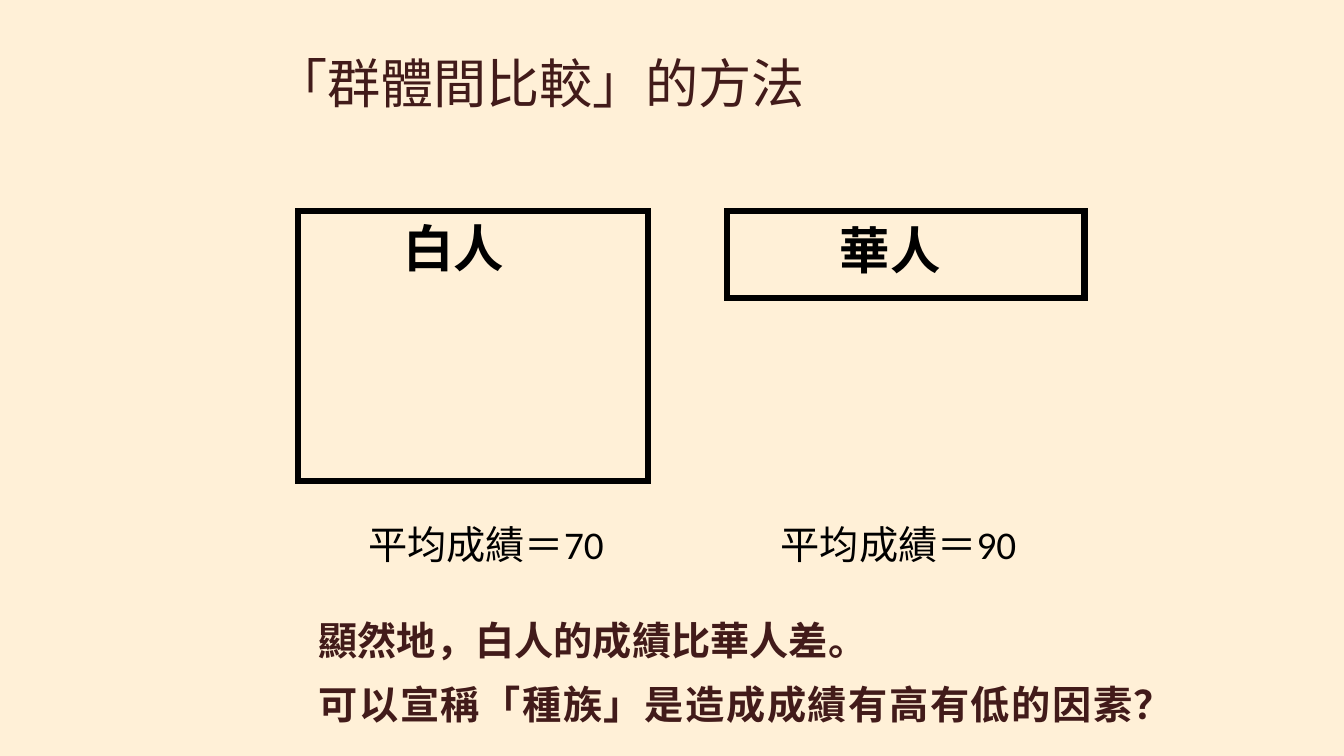
from pptx import Presentation
from pptx.dml.color import RGBColor
from pptx.enum.shapes import MSO_SHAPE
from pptx.enum.text import MSO_ANCHOR, MSO_AUTO_SIZE, PP_ALIGN
from pptx.oxml.ns import qn
from pptx.util import Inches, Pt
from lxml.etree import SubElement

CREAM = RGBColor(0xFF, 0xF0, 0xD7)
MAROON = RGBColor(0x42, 0x1B, 0x1A)
BLACK = RGBColor(0x00, 0x00, 0x00)


def write_text(frame, text, *, size, color=BLACK, font="Calibri", bold=False,
               align=PP_ALIGN.LEFT, anchor=MSO_ANCHOR.TOP, line_spacing=1.0,
               space_before=0, hanging=None, left_inset=0.1, v_inset=0.05):
    """Fill a text frame with one paragraph per line of text."""
    frame.word_wrap = True
    frame.auto_size = MSO_AUTO_SIZE.NONE
    frame.vertical_anchor = anchor
    frame.margin_left, frame.margin_right = Inches(left_inset), Inches(0.1)
    frame.margin_top = frame.margin_bottom = Inches(v_inset)
    frame.text = text
    for index, paragraph in enumerate(frame.paragraphs):
        paragraph.alignment = align
        paragraph.line_spacing = line_spacing
        paragraph.space_before = Pt(space_before if index else 0)
        if hanging:
            margin, indent = hanging
            properties = paragraph._p.get_or_add_pPr()
            properties.set("marL", str(Inches(margin)))
            properties.set("indent", str(Inches(indent)))
            SubElement(properties, qn("a:buNone"))
        paragraph.font.size = Pt(size)
        paragraph.font.name = font
        paragraph.font.bold = bold
        paragraph.font.color.rgb = color


def place(shape, left, top, width, height):
    """Move and size a shape in inches."""
    shape.left, shape.top = Inches(left), Inches(top)
    shape.width, shape.height = Inches(width), Inches(height)


def add_label(slide, text, left, top, width, height, **text_format):
    """Add a text box with formatted text."""
    label = slide.shapes.add_textbox(
        Inches(left), Inches(top), Inches(width), Inches(height))
    write_text(label.text_frame, text, **text_format)


def add_frame(slide, left, top, width, height):
    """Add an unfilled rectangle with a heavy, sharp-cornered black outline."""
    frame = slide.shapes.add_shape(
        MSO_SHAPE.RECTANGLE, Inches(left), Inches(top), Inches(width), Inches(height))
    frame.shadow.inherit = False
    frame.fill.background()
    frame.line.color.rgb = BLACK
    frame.line.width = Pt(3.25)
    outline = frame.line._get_or_add_ln()
    SubElement(outline, qn("a:miter")).set("lim", "800000")


def add_group(slide, name, score, name_box, frame_box, score_left):
    """Add one compared group: its name, frame and average score."""
    add_label(slide, name, *name_box, size=27, bold=True, left_inset=0.78)
    add_frame(slide, *frame_box)
    add_label(slide, f"平均成績＝{score}", score_left, 3.82, 2.01, 0.45, size=21)


def main():
    """Build the group comparison slide."""
    presentation = Presentation()
    presentation.slide_width = Inches(10)
    presentation.slide_height = Inches(10) * 9 // 16
    slide = presentation.slides.add_slide(presentation.slide_layouts[1])
    slide.background.fill.solid()
    slide.background.fill.fore_color.rgb = CREAM

    title, conclusion = slide.placeholders
    place(title, 1.94, 0.03, 6.19, 1.17)
    write_text(title.text_frame, "「群體間比較」的方法", size=28.5, color=MAROON,
               anchor=MSO_ANCHOR.MIDDLE, v_inset=0.1)
    place(conclusion, 2.13, 4.53, 6.41, 0.88)
    write_text(conclusion.text_frame,
               "顯然地，白人的成績比華人差。\n可以宣稱「種族」是造成成績有高有低的因素？",
               size=21, color=MAROON, font="Vollkorn", bold=True,
               align=PP_ALIGN.JUSTIFY, anchor=MSO_ANCHOR.MIDDLE, line_spacing=1.15,
               space_before=5.2, hanging=(0.5, -0.36), v_inset=0.1)

    add_group(slide, "白人", 70, (2.22, 1.57, 2.6, 0.56), (2.22, 1.57, 2.6, 2.01), 2.64)
    add_group(slide, "華人", 90, (5.47, 1.58, 2.66, 0.56), (5.41, 1.57, 2.66, 0.65), 5.71)
    presentation.save("out.pptx")


if __name__ == "__main__":
    main()
